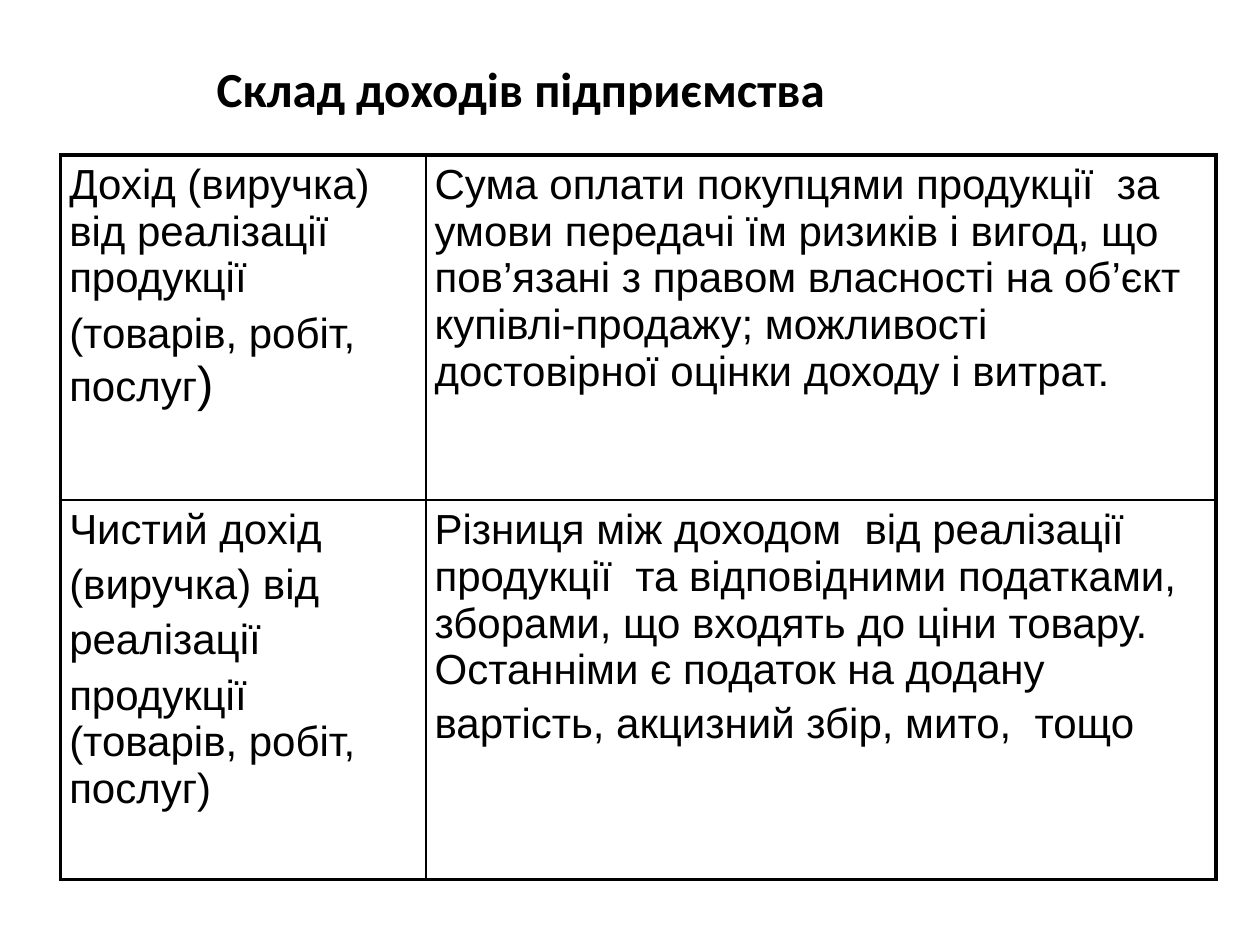
"""Build a slide with a table on the composition of company income."""
from dataclasses import dataclass

from lxml import etree
from pptx import Presentation
from pptx.dml.color import RGBColor
from pptx.enum.text import MSO_ANCHOR, PP_ALIGN
from pptx.oxml.ns import qn
from pptx.util import Inches, Pt

LEFT = PP_ALIGN.LEFT
MIDDLE = MSO_ANCHOR.MIDDLE
TITLE_ONLY = 5


@dataclass(frozen=True)
class Theme:
    """Colours, fonts, type sizes and line widths of the slide."""
    ink: str = "000000"
    paper: str = "FFFFFF"
    title_font: str = "Calibri"
    body_font: str = "Arial"
    large: float = 28
    body: float = 24
    paragraph_gap: float = 4.8
    outer_line: float = 2.25
    inner_line: float = 1


@dataclass(frozen=True)
class Span:
    """A run of text with its size."""
    text: str
    size: float


THEME = Theme()
TITLE = "Склад доходів підприємства"
COLUMN_WIDTHS = (2.9, 6.27)
ROW_HEIGHTS = (2.74, 3.01)


def body(text: str) -> Span:
    """Return a span at the body size."""
    return Span(text, THEME.body)


INCOME_ROWS = (
    (
        (
            (body("Дохід (виручка) від реалізації продукції"),),
            (body("(товарів, робіт, послуг"), Span(")", THEME.large)),
        ),
        (
            (body("Сума оплати покупцями продукції  за умови передачі їм "
                  "ризиків і вигод, що пов’язані з правом власності на об’єкт "
                  "купівлі-продажу; можливості достовірної оцінки доходу і витрат."),),
        ),
    ),
    (
        (
            (body("Чистий дохід"),),
            (body("(виручка) від"),),
            (body("реалізації"),),
            (body("продукції (товарів, робіт, послуг)"),),
        ),
        (
            (body("Різниця між доходом  від реалізації продукції  та відповідними "
                  "податками, зборами, що входять до ціни товару. Останніми є податок "
                  "на додану вартість, акцизний збір, мито,  тощо"),
             Span(" ", THEME.large)),
        ),
    ),
)


def add_span(paragraph, span: Span, font_name: str, bold: bool = False) -> None:
    """Add one formatted run to a paragraph."""
    run = paragraph.add_run()
    run.text = span.text
    run.font.name = font_name
    run.font.size = Pt(span.size)
    run.font.bold = bold
    run.font.color.rgb = RGBColor.from_string(THEME.ink)


def add_title(slide) -> None:
    """Place and fill the title placeholder."""
    title = slide.shapes.title
    title.left, title.top = Inches(1.62), Inches(0.3)
    title.width, title.height = Inches(6.75), Inches(0.85)
    title.text_frame.vertical_anchor = MIDDLE
    paragraph = title.text_frame.paragraphs[0]
    paragraph.alignment = LEFT
    paragraph.line_spacing = 0.9
    add_span(paragraph, Span(TITLE, THEME.large), THEME.title_font, bold=True)


def set_borders(cell, row: int, column: int) -> None:
    """Draw thick lines on the table's outer edges and thin ones inside."""
    outer_edges = {
        "a:lnL": column == 0,
        "a:lnR": column == len(COLUMN_WIDTHS) - 1,
        "a:lnT": row == 0,
        "a:lnB": row == len(ROW_HEIGHTS) - 1,
    }
    properties = cell._tc.get_or_add_tcPr()
    for tag, is_outer in outer_edges.items():
        width = Pt(THEME.outer_line if is_outer else THEME.inner_line)
        line = etree.SubElement(properties, qn(tag), w=str(width))
        fill = etree.SubElement(line, qn("a:solidFill"))
        etree.SubElement(fill, qn("a:srgbClr"), val=THEME.ink)


def fill_cell(cell, paragraphs: tuple[tuple[Span, ...], ...]) -> None:
    """Write the paragraphs of one cell."""
    cell.margin_left = cell.margin_right = Inches(0.07)
    cell.margin_top = cell.margin_bottom = Inches(0.05)
    cell.fill.solid()
    cell.fill.fore_color.rgb = RGBColor.from_string(THEME.paper)
    for index, spans in enumerate(paragraphs):
        if index:
            paragraph = cell.text_frame.add_paragraph()
            paragraph.space_before = Pt(THEME.paragraph_gap)
        else:
            paragraph = cell.text_frame.paragraphs[0]
        for span in spans:
            add_span(paragraph, span, THEME.body_font)


def add_income_table(slide) -> None:
    """Add the table of income kinds and their definitions."""
    table = slide.shapes.add_table(
        len(ROW_HEIGHTS), len(COLUMN_WIDTHS), Inches(0.48), Inches(1.23),
        Inches(sum(COLUMN_WIDTHS)), Inches(sum(ROW_HEIGHTS))).table
    table.first_row = table.horz_banding = False
    for column, width in zip(table.columns, COLUMN_WIDTHS):
        column.width = Inches(width)
    for row, height in zip(table.rows, ROW_HEIGHTS):
        row.height = Inches(height)
    for row_index, cells in enumerate(INCOME_ROWS):
        for column_index, paragraphs in enumerate(cells):
            cell = table.cell(row_index, column_index)
            set_borders(cell, row_index, column_index)
            fill_cell(cell, paragraphs)


def main() -> None:
    """Create and save the presentation."""
    presentation = Presentation()
    presentation.slide_width = Inches(10)
    presentation.slide_height = Inches(7.5)
    slide = presentation.slides.add_slide(presentation.slide_layouts[TITLE_ONLY])
    add_title(slide)
    add_income_table(slide)
    presentation.save("out.pptx")


if __name__ == "__main__":
    main()
